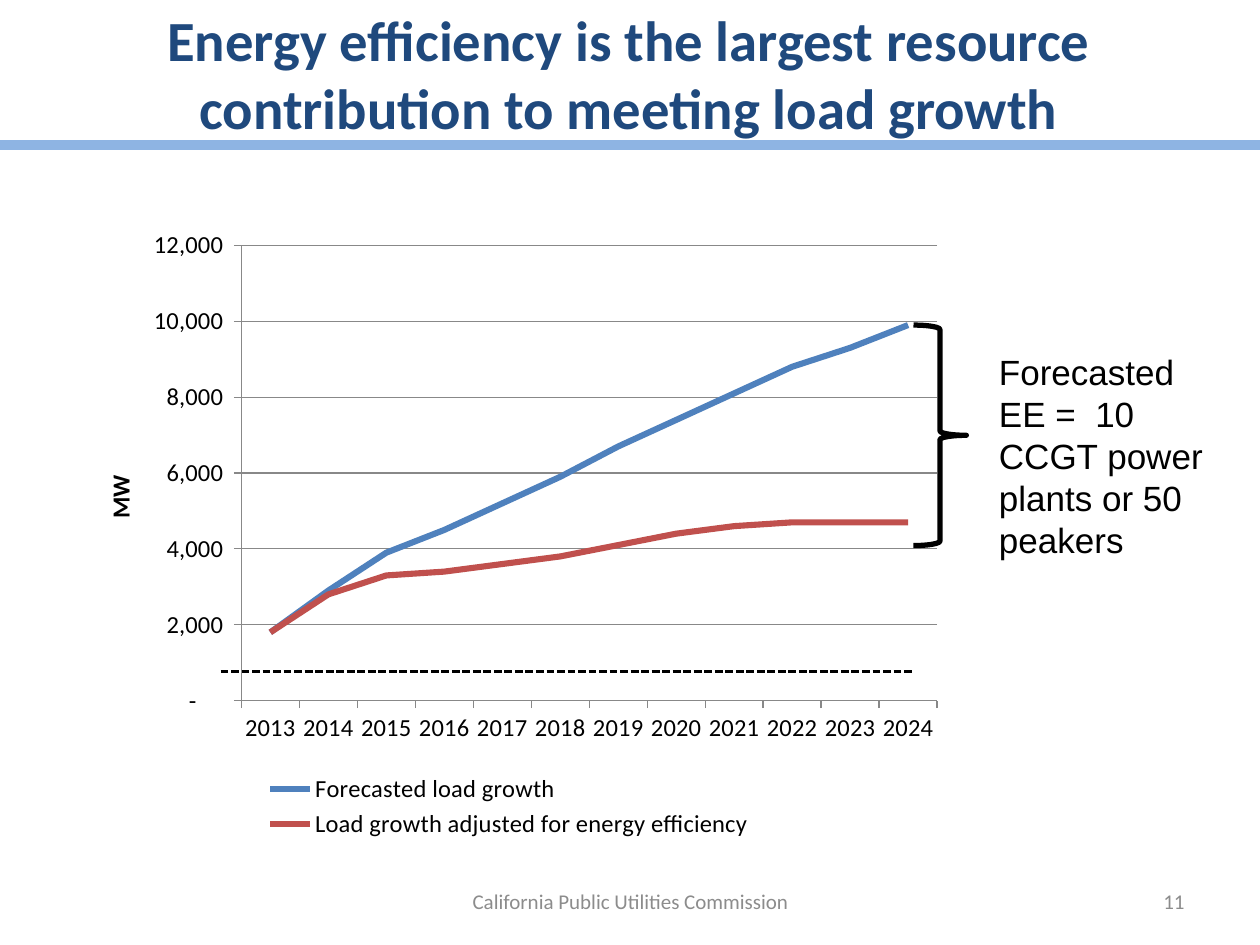
from dataclasses import dataclass

from lxml import etree
from pptx import Presentation
from pptx.chart.data import CategoryChartData
from pptx.dml.color import RGBColor
from pptx.enum.chart import XL_CHART_TYPE, XL_LEGEND_POSITION, XL_TICK_MARK
from pptx.enum.dml import MSO_LINE
from pptx.enum.shapes import MSO_CONNECTOR, MSO_SHAPE
from pptx.enum.text import MSO_ANCHOR, PP_ALIGN
from pptx.oxml import parse_xml
from pptx.oxml.ns import nsdecls, qn
from pptx.util import Inches, Pt

LINE_CHART = XL_CHART_TYPE.LINE
LEGEND_BOTTOM = XL_LEGEND_POSITION.BOTTOM
TICK_OUT = XL_TICK_MARK.OUTSIDE
SYS_DASH = MSO_LINE.SQUARE_DOT
STRAIGHT = MSO_CONNECTOR.STRAIGHT
RIGHT_BRACE = MSO_SHAPE.RIGHT_BRACE
LEFT, CENTER, RIGHT = PP_ALIGN.LEFT, PP_ALIGN.CENTER, PP_ALIGN.RIGHT
TOP, MIDDLE = MSO_ANCHOR.TOP, MSO_ANCHOR.MIDDLE
TITLE_ONLY = 5

COLORS = {
    "title": "1F497D",
    "rule": "8EB4E3",
    "text": "000000",
    "footer": "8C8C8C",
    "axis": "888888",
    "forecast": "4F81BD",
    "adjusted": "C0504D",
}
NUMBER_FORMAT = '_(* #,##0_);_(* \\(#,##0\\);_(* "-"??_);_('
YEARS = [str(year) for year in range(2013, 2025)]


@dataclass
class Label:
    text: str
    box: tuple[float, float, float, float]
    size: float
    color: str
    font: str = "Calibri"
    align: PP_ALIGN = LEFT
    anchor: MSO_ANCHOR = MIDDLE
    bold: bool = False


@dataclass
class Rule:
    start: tuple[float, float]
    end: tuple[float, float]
    color: str
    width: float
    dash: MSO_LINE | None = None


@dataclass
class LoadSeries:
    name: str
    megawatts: list[int]
    color: str


TITLE = Label("Energy efficiency is the largest resource contribution to meeting load growth",
              (0.49, 0, 9, 1.15), 32.4, "title", align=CENTER, bold=True)
LABELS = [
    Label("11", (7.17, 6.95, 2.33, 0.4), 12, "footer", align=RIGHT),
    Label("California Public Utilities Commission", (3.42, 6.95, 3.17, 0.4), 12,
          "footer", align=CENTER),
    Label("Forecasted EE =  10 CCGT power plants or 50 peakers",
          (7.83, 2.73, 1.83, 1.45), 20, "text", font="Arial", anchor=TOP),
]
TITLE_RULE = Rule((0, 1.15), (10, 1.15), "rule", 6)
BASE_RULE = Rule((1.75, 5.33), (7.25, 5.33), "text", 1.5, SYS_DASH)
LOADS = [
    LoadSeries("Forecasted load growth",
               [1800, 2900, 3900, 4500, 5200, 5900, 6700, 7400, 8100, 8800, 9300, 9900],
               "forecast"),
    LoadSeries("Load growth adjusted for energy efficiency",
               [1800, 2800, 3300, 3400, 3600, 3800, 4100, 4400, 4600, 4700, 4700, 4700],
               "adjusted"),
]


def rgb(name: str) -> RGBColor:
    return RGBColor.from_string(COLORS[name])


def style_line(line, color: str, width: float) -> None:
    line.color.rgb = rgb(color)
    line.width = Pt(width)


def style_font(font, size: float, color: str, name: str = "Calibri", bold: bool = False) -> None:
    font.size, font.name, font.bold = Pt(size), name, bold
    font.color.rgb = rgb(color)


def write_label(shape, label: Label) -> None:
    shape.left, shape.top, shape.width, shape.height = map(Inches, label.box)
    frame = shape.text_frame
    frame.word_wrap = True
    frame.vertical_anchor = label.anchor
    paragraph = frame.paragraphs[0]
    paragraph.alignment = label.align
    run = paragraph.add_run()
    run.text = label.text
    style_font(run.font, label.size, label.color, label.font, label.bold)


def add_rule(shapes, rule: Rule):
    connector = shapes.add_connector(STRAIGHT, *map(Inches, rule.start + rule.end))
    style_line(connector.line, rule.color, rule.width)
    if rule.dash is not None:
        connector.line.dash_style = rule.dash
    etree.SubElement(connector._element.spPr, qn("a:effectLst"))
    return connector


def manual_layout(target: str, **fractions: float):
    """Build a c:layout placed by fractions of the chart's width and height."""
    inner = '<c:layoutTarget val="inner"/>' if target == "plot" else ""
    modes = '<c:xMode val="edge"/><c:yMode val="edge"/>'
    sizes = "".join(f'<c:{key} val="{value}"/>' for key, value in fractions.items())
    return parse_xml(f'<c:layout {nsdecls("c")}><c:manualLayout>{inner}{modes}{sizes}'
                     "</c:manualLayout></c:layout>")


def place(parent, layout, after: str | None = None) -> None:
    """Replace the parent's layout, after the named child or at the front."""
    for old in parent.findall(qn("c:layout")):
        parent.remove(old)
    position = 0 if after is None else parent.index(parent.find(qn(after))) + 1
    parent.insert(position, layout)


def add_load_chart(shapes) -> None:
    data = CategoryChartData(number_format="#,##0")
    data.categories = YEARS
    for load in LOADS:
        data.add_series(load.name, load.megawatts)
    chart = shapes.add_chart(LINE_CHART, *map(Inches, (0.5, 1.75, 7.08, 4.95)), data).chart
    chart.has_title = False
    style_font(chart.font, 14, "text")

    plot = chart.plots[0]
    plot.vary_by_categories = False
    for series, load in zip(plot.series, LOADS):
        series.smooth = False
        style_line(series.format.line, load.color, 3.5)

    megawatt_axis = chart.value_axis
    for axis in (chart.category_axis, megawatt_axis):
        axis.major_tick_mark = TICK_OUT
        style_line(axis.format.line, "axis", 0.75)
    megawatt_axis.minimum_scale, megawatt_axis.maximum_scale = 0, 12000
    megawatt_axis.major_unit = 2000
    megawatt_axis.has_major_gridlines = True
    style_line(megawatt_axis.major_gridlines.format.line, "axis", 0.75)
    megawatt_axis.tick_labels.number_format = NUMBER_FORMAT
    megawatt_axis.tick_labels.number_format_is_linked = False
    unit = megawatt_axis.axis_title.text_frame.paragraphs[0].add_run()
    unit.text = "MW"
    style_font(unit.font, 14, "text", bold=True)

    chart.has_legend = True
    chart.legend.position = LEGEND_BOTTOM
    chart.legend.include_in_layout = False

    place(chart._chartSpace.chart.plotArea, manual_layout("plot", x=0.2, y=0.04, w=0.78, h=0.73))
    place(chart.legend._element, manual_layout("legend", x=0.22, y=0.88, w=0.56, h=0.12),
          "c:legendPos")
    place(megawatt_axis.axis_title._element, manual_layout("title", x=0.04, y=0.4), "c:tx")


def add_savings_brace(shapes) -> None:
    brace = shapes.add_shape(RIGHT_BRACE, *map(Inches, (7.25, 2.58, 0.42, 1.75)))
    brace.shadow.inherit = False
    brace.fill.background()
    style_line(brace.line, "text", 3)


def main() -> None:
    deck = Presentation()
    deck.slide_width, deck.slide_height = Inches(10), Inches(7.5)
    slide = deck.slides.add_slide(deck.slide_layouts[TITLE_ONLY])
    shapes = slide.shapes

    write_label(shapes.title, TITLE)
    title_rule = add_rule(shapes, TITLE_RULE)
    shapes.title._element.addprevious(title_rule._element)
    add_load_chart(shapes)
    add_savings_brace(shapes)
    add_rule(shapes, BASE_RULE)
    for label in LABELS:
        write_label(shapes.add_textbox(*map(Inches, label.box)), label)

    deck.save("out.pptx")


if __name__ == "__main__":
    main()
